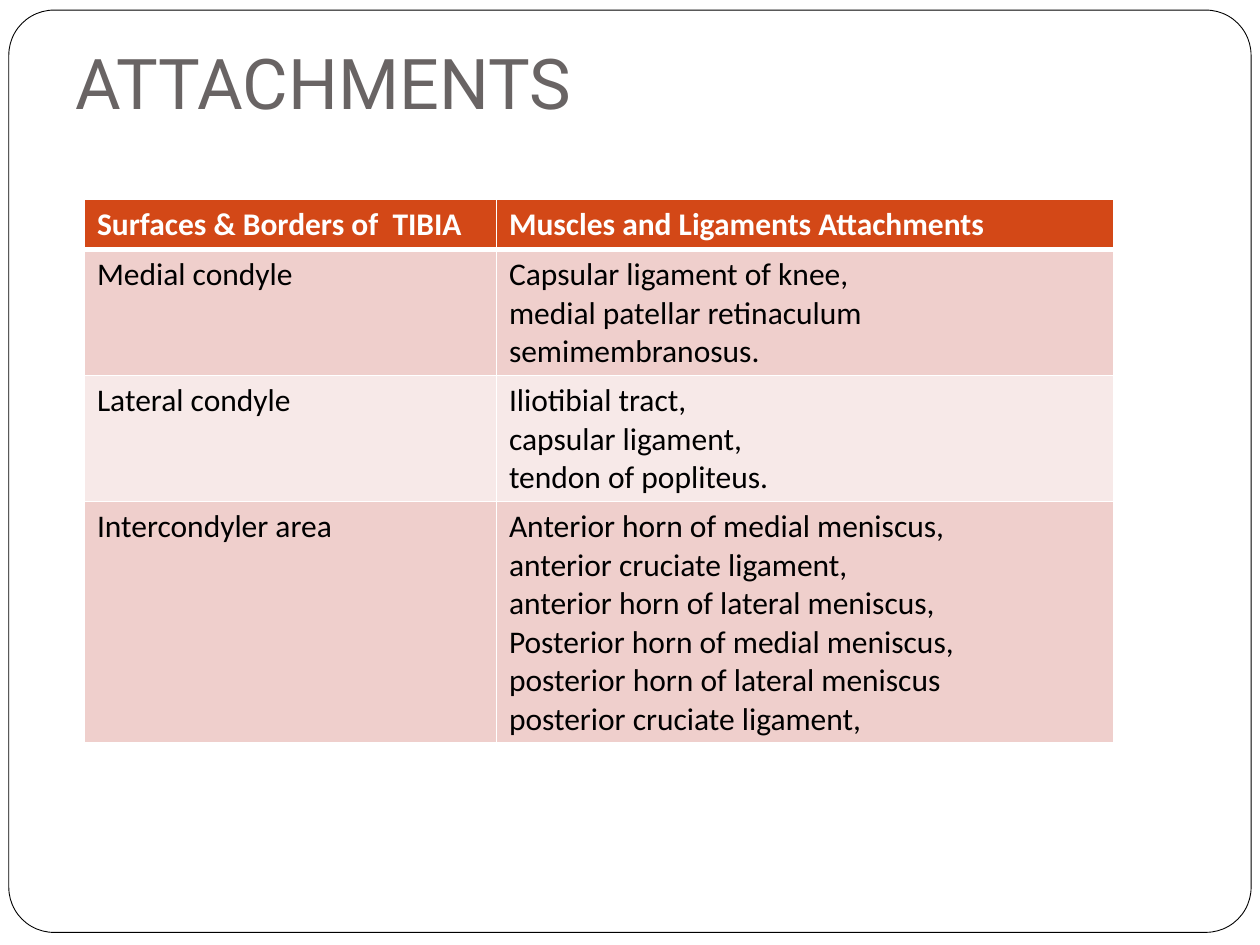
from lxml import etree
from pptx import Presentation
from pptx import util as u
from pptx.dml.color import RGBColor
from pptx.enum import shapes, text
from pptx.oxml.ns import qn

WHITE = RGBColor(0xFF, 0xFF, 0xFF)
BLACK = RGBColor(0, 0, 0)
GREY = RGBColor(0x69, 0x64, 0x64)
ORANGE = RGBColor(0xD3, 0x48, 0x17)
DARK_BAND = RGBColor(0xEF, 0xCF, 0xCC)
LIGHT_BAND = RGBColor(0xF7, 0xE9, 0xE8)

COLUMN_WIDTHS = [3.27, 4.9]
ROW_HEIGHTS = [0.4, 1, 1, 1.91]
ROWS = [
    ("Surfaces & Borders of  TIBIA", ["Muscles and Ligaments Attachments"]),
    ("Medial condyle", ["Capsular ligament of knee,",
                        "medial patellar retinaculum semimembranosus."]),
    ("Lateral condyle", ["Iliotibial tract,", "capsular ligament,",
                         "tendon of popliteus."]),
    ("Intercondyler area", ["Anterior horn of medial meniscus,",
                            "anterior cruciate ligament,",
                            "anterior horn of lateral meniscus,",
                            "Posterior horn of medial meniscus,",
                            "posterior horn of lateral meniscus",
                            "posterior cruciate ligament,"]),
]


def inches(*lengths):
    return [u.Inches(length) for length in lengths]


def add_frame(slide, box):
    frame = slide.shapes.add_shape(
        shapes.MSO_SHAPE.ROUNDED_RECTANGLE, *inches(*box))
    frame.adjustments[0] = 0.049
    frame.shadow.inherit = False
    frame.fill.solid()
    frame.fill.fore_color.rgb = WHITE
    frame.line.color.rgb = BLACK
    frame.line.width = u.Pt(0.5)


def add_title(slide, box, wording):
    text_frame = slide.shapes.add_textbox(*inches(*box)).text_frame
    text_frame.word_wrap = True
    text_frame.vertical_anchor = text.MSO_ANCHOR.BOTTOM
    text_frame.margin_bottom = u.Inches(0.1)
    paragraph = text_frame.paragraphs[0]
    paragraph.text = wording
    paragraph.font.name = "Roboto"
    paragraph.font.size = u.Pt(40)
    paragraph.font.color.rgb = GREY


def set_borders(cell, bottom_width):
    properties = cell._tc.get_or_add_tcPr()
    widths = {"a:lnL": 1, "a:lnR": 1, "a:lnT": 1, "a:lnB": bottom_width}
    # Border lines must come before the cell fill
    for position, (tag, width) in enumerate(widths.items()):
        line = etree.Element(qn(tag), w=str(u.Pt(width)))
        fill = etree.SubElement(line, qn("a:solidFill"))
        etree.SubElement(fill, qn("a:srgbClr"), val=str(WHITE))
        properties.insert(position, line)


def fill_cell(cell, lines, row_index):
    is_header = row_index == 0
    cell.fill.solid()
    cell.fill.fore_color.rgb = (
        ORANGE if is_header else DARK_BAND if row_index % 2 else LIGHT_BAND)
    set_borders(cell, 3 if is_header else 1)
    cell.text = "\n".join(lines)
    for paragraph in cell.text_frame.paragraphs:
        paragraph.font.name = "Calibri"
        paragraph.font.size = u.Pt(18)
        paragraph.font.bold = is_header
        paragraph.font.color.rgb = WHITE if is_header else BLACK


def add_attachment_table(slide, left, top):
    table = slide.shapes.add_table(
        len(ROWS), len(COLUMN_WIDTHS),
        *inches(left, top, sum(COLUMN_WIDTHS), sum(ROW_HEIGHTS))).table
    for column, width in zip(table.columns, COLUMN_WIDTHS):
        column.width = u.Inches(width)
    for row_index, (surface, attachments) in enumerate(ROWS):
        table.rows[row_index].height = u.Inches(ROW_HEIGHTS[row_index])
        fill_cell(table.cell(row_index, 0), [surface], row_index)
        fill_cell(table.cell(row_index, 1), attachments, row_index)


def main():
    presentation = Presentation()
    presentation.slide_width, presentation.slide_height = inches(10, 7.5)
    slide = presentation.slides.add_slide(presentation.slide_layouts[6])
    add_frame(slide, (0.07, 0.08, 9.86, 7.32))
    add_title(slide, (0.5, -0.17, 8.5, 1.25), "ATTACHMENTS")
    add_attachment_table(slide, 0.67, 1.58)
    presentation.save("out.pptx")


if __name__ == "__main__":
    main()
